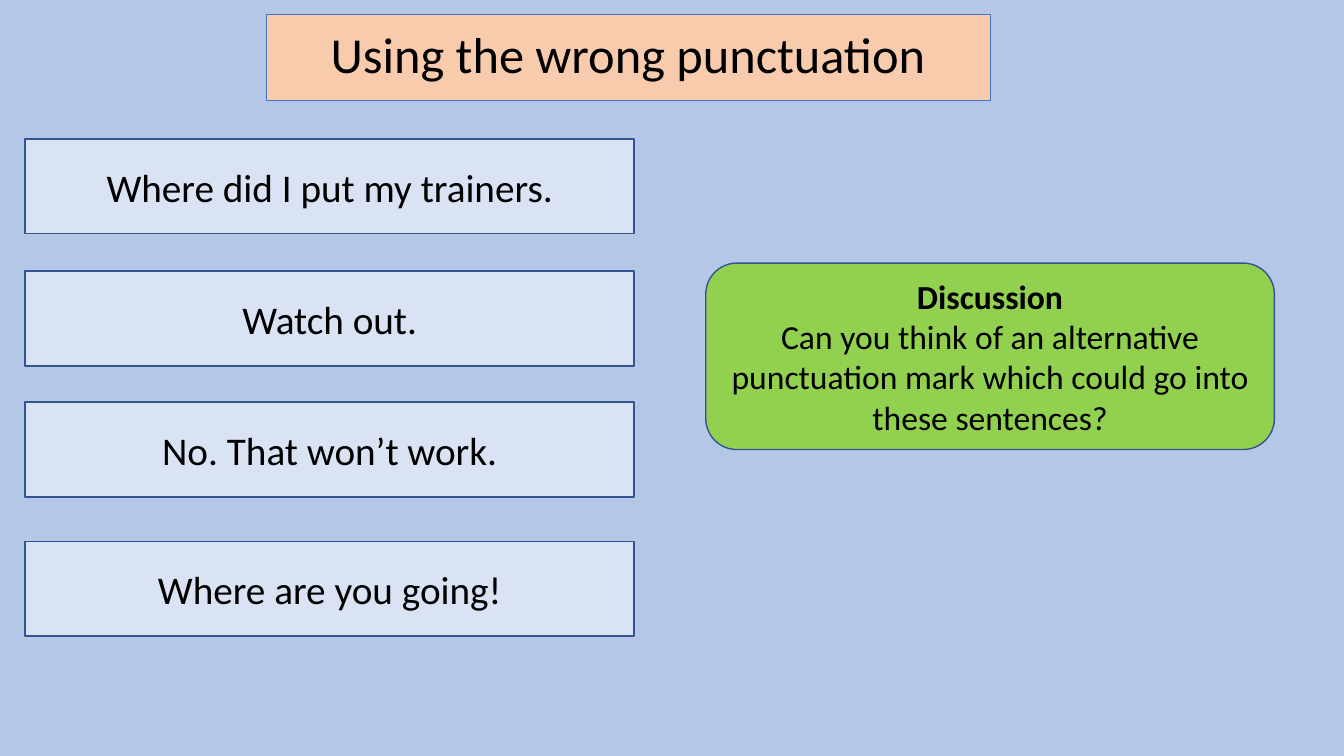
"""Build a slide about sentences that use the wrong punctuation."""
from dataclasses import dataclass

from pptx import Presentation
from pptx.dml.color import RGBColor
from pptx.enum.shapes import MSO_SHAPE
from pptx.enum.text import MSO_ANCHOR, PP_ALIGN
from pptx.slide import Slide
from pptx.util import Emu, Pt

RECTANGLE = MSO_SHAPE.RECTANGLE
ROUNDED = MSO_SHAPE.ROUNDED_RECTANGLE
MIDDLE = MSO_ANCHOR.MIDDLE
CENTER = PP_ALIGN.CENTER
EMU_PER_PX = 9144
COLORS = {
    "background": "B4C7E7",
    "title": "F8CBAD",
    "title_edge": "4472C4",
    "sentence": "DAE3F3",
    "discussion": "92D050",
    "edge": "325491",
    "text": "000000",
}


@dataclass(frozen=True)
class Panel:
    """A filled box holding centred lines of text."""

    left: int
    top: int
    width: int
    height: int
    lines: tuple[str, ...]
    size: int
    fill: str
    edge: str = "edge"
    edge_width: float = 1
    outline: MSO_SHAPE = RECTANGLE
    spacing: float = 1.0
    bold_heading: bool = False


SENTENCES = {
    138: "Where did I put my trainers.",
    269: "Watch out.",
    399: "No. That won’t work.",
    537: "Where are you going!",
}
HEADING = Panel(264, 14, 718, 86, ("Using the wrong punctuation",), 36, "title",
                edge="title_edge", edge_width=0.75, spacing=0.9)
DISCUSSION = Panel(
    700, 261, 564, 185,
    ("Discussion",
     "Can you think of an alternative punctuation mark which could go into these sentences?"),
    24, "discussion", outline=ROUNDED, bold_heading=True)


def px(length: int) -> Emu:
    """Turn px into EMU."""
    return Emu(length * EMU_PER_PX)


def color(name: str) -> RGBColor:
    """Look up a named colour."""
    return RGBColor.from_string(COLORS[name])


def draw_panel(slide: Slide, panel: Panel) -> None:
    """Draw one panel with its text."""
    box = slide.shapes.add_shape(
        panel.outline, px(panel.left), px(panel.top), px(panel.width), px(panel.height))
    box.shadow.inherit = False
    box.fill.solid()
    box.fill.fore_color.rgb = color(panel.fill)
    box.line.color.rgb = color(panel.edge)
    box.line.width = Pt(panel.edge_width)
    frame = box.text_frame
    frame.word_wrap = True
    frame.vertical_anchor = MIDDLE
    for index, line in enumerate(panel.lines):
        paragraph = frame.add_paragraph() if index else frame.paragraphs[0]
        paragraph.alignment = CENTER
        paragraph.line_spacing = panel.spacing
        run = paragraph.add_run()
        run.text = line
        formats = {"name": "Calibri", "size": Pt(panel.size),
                   "bold": panel.bold_heading and index == 0}
        for attribute, value in formats.items():
            setattr(run.font, attribute, value)
        run.font.color.rgb = color("text")


def main() -> None:
    """Assemble and save the slide."""
    deck = Presentation()
    deck.slide_width, deck.slide_height = px(1333), px(750)
    slide = deck.slides.add_slide(deck.slide_layouts[6])
    slide.background.fill.solid()
    slide.background.fill.fore_color.rgb = color("background")
    sentences = [Panel(25, top, 604, 94, (text,), 28, "sentence")
                 for top, text in SENTENCES.items()]
    for panel in (HEADING, DISCUSSION, *sentences):
        draw_panel(slide, panel)
    deck.save("out.pptx")


if __name__ == "__main__":
    main()
